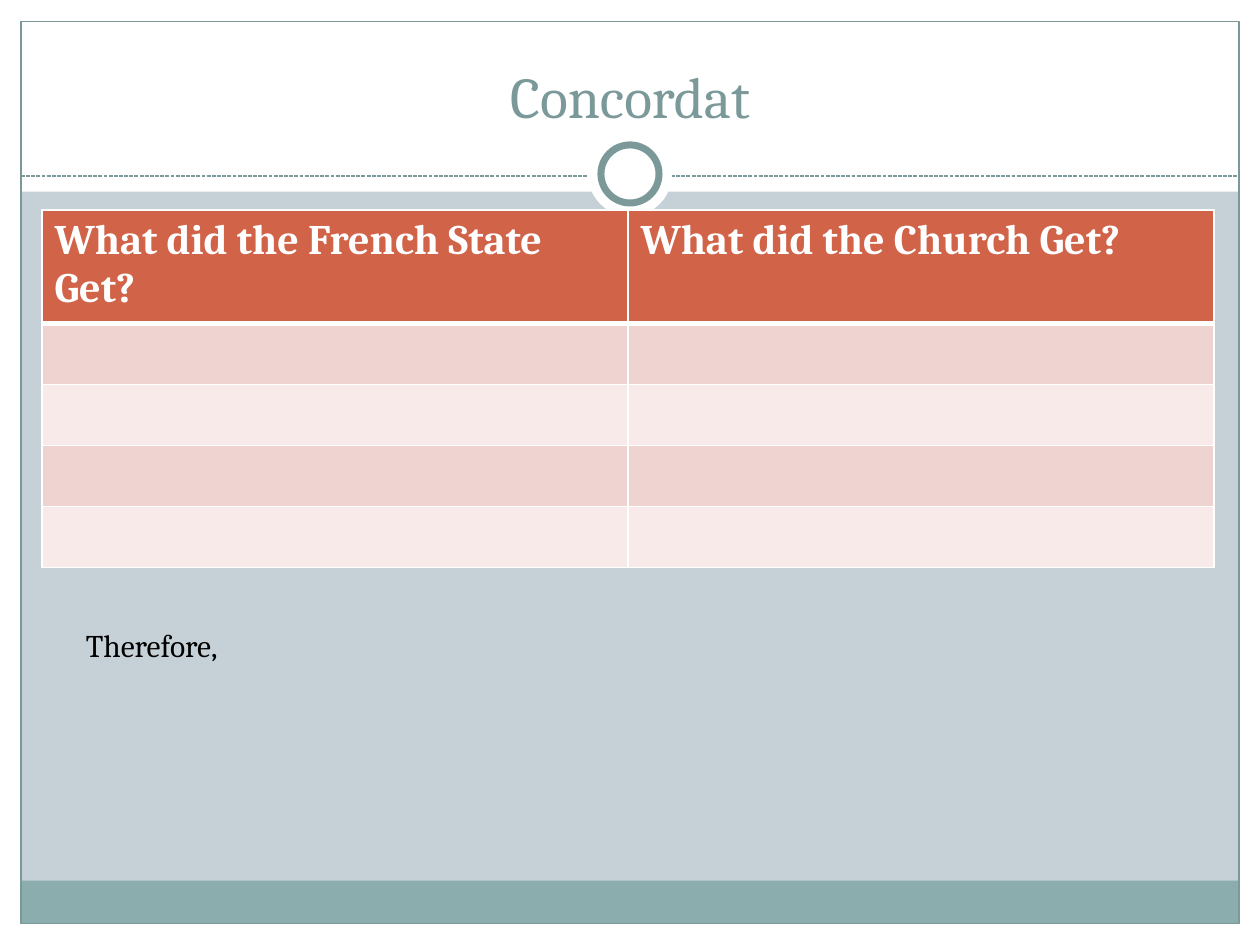
from dataclasses import dataclass

from lxml.etree import SubElement
from pptx import Presentation
from pptx.dml.color import RGBColor
from pptx.enum.dml import MSO_LINE
from pptx.enum.shapes import MSO_CONNECTOR, MSO_SHAPE
from pptx.enum.text import MSO_ANCHOR, MSO_AUTO_SIZE, PP_ALIGN
from pptx.oxml.ns import qn
from pptx.util import Pt


@dataclass(frozen=True)
class Theme:
    font: str = "Cambria"
    background: str = "C5D1D7"
    white: str = "FFFFFF"
    black: str = "000000"
    teal: str = "7C999A"
    footer: str = "8CADAE"
    header: str = "D16349"
    bands: tuple = ("EED3D0", "F7EAE9")
    title_size: int = 33
    header_size: int = 24
    body_size: int = 18


theme = Theme()


def add_panel(kind, box, fill=None, line=None, weight=0.75):
    panel = slide.shapes.add_shape(kind, *map(Pt, box))
    panel.shadow.inherit = False
    if fill:
        panel.fill.solid()
        panel.fill.fore_color.rgb = RGBColor.from_string(fill)
    else:
        panel.fill.background()
    if line:
        panel.line.color.rgb = RGBColor.from_string(line)
        panel.line.width = Pt(weight)
    else:
        panel.line.fill.background()


def write(text_frame, text, size, color, bold=False):
    text_frame.text = text
    text_frame.word_wrap = True
    font = text_frame.paragraphs[0].runs[0].font
    font.name = theme.font
    font.size = Pt(size)
    font.bold = bold
    font.color.rgb = RGBColor.from_string(color)


presentation = Presentation()
presentation.slide_width, presentation.slide_height = Pt(720), Pt(540)
slide = presentation.slides.add_slide(presentation.slide_layouts[6])
slide.background.fill.solid()
slide.background.fill.fore_color.rgb = RGBColor.from_string(theme.background)

for margin in [(0, 528, 720, 12), (0, 0, 720, 109.5), (0, 0, 12, 540), (708, 0, 12, 540)]:
    add_panel(MSO_SHAPE.RECTANGLE, margin, theme.white)
add_panel(MSO_SHAPE.RECTANGLE, (12, 503.3, 696, 24.5), theme.footer)
add_panel(MSO_SHAPE.RECTANGLE, (12, 12.2, 696, 515.5), line=theme.teal)

divider = slide.shapes.add_connector(MSO_CONNECTOR.STRAIGHT, Pt(12), Pt(100.6), Pt(708), Pt(100.6))
divider.line.color.rgb = RGBColor.from_string(theme.teal)
divider.line.width = Pt(0.75)
divider.line.dash_style = MSO_LINE.SQUARE_DOT
SubElement(divider.line._get_or_add_ln().getparent(), qn("a:effectLst"))

add_panel(MSO_SHAPE.OVAL, (336, 75.6, 48, 48), theme.white)
add_panel(MSO_SHAPE.OVAL, (343.4, 82.8, 33.2, 33.2), theme.white, theme.teal, 4)

title = slide.shapes.add_textbox(Pt(24), Pt(18), Pt(672), Pt(60)).text_frame
write(title, "Concordat", theme.title_size, theme.teal)
title.vertical_anchor = MSO_ANCHOR.BOTTOM
title.paragraphs[0].alignment = PP_ALIGN.CENTER

headings = ["What did the French State Get?", "What did the Church Get?"]
row_heights = [62.3] + [34.9] * 4
gains = slide.shapes.add_table(
    len(row_heights), len(headings), Pt(24), Pt(120), Pt(669.6), Pt(sum(row_heights))
).table
for row_index, height in enumerate(row_heights):
    gains.rows[row_index].height = Pt(height)
    for column_index, heading in enumerate(headings):
        cell = gains.cell(row_index, column_index)
        properties = cell._tc.get_or_add_tcPr()
        for side in "LRTB":
            thick = (row_index, side) in [(0, "B"), (1, "T")]
            border = SubElement(properties, qn(f"a:ln{side}"), w=str(Pt(3 if thick else 1)))
            SubElement(SubElement(border, qn("a:solidFill")), qn("a:srgbClr"), val=theme.white)
        fill = theme.bands[(row_index - 1) % 2] if row_index else theme.header
        cell.fill.solid()
        cell.fill.fore_color.rgb = RGBColor.from_string(fill)
        if row_index == 0:
            write(cell.text_frame, heading, theme.header_size, theme.white, bold=True)

conclusion = slide.shapes.add_textbox(Pt(42), Pt(354), Pt(648), Pt(29)).text_frame
write(conclusion, "Therefore,", theme.body_size, theme.black)
conclusion.auto_size = MSO_AUTO_SIZE.SHAPE_TO_FIT_TEXT

presentation.save("out.pptx")
